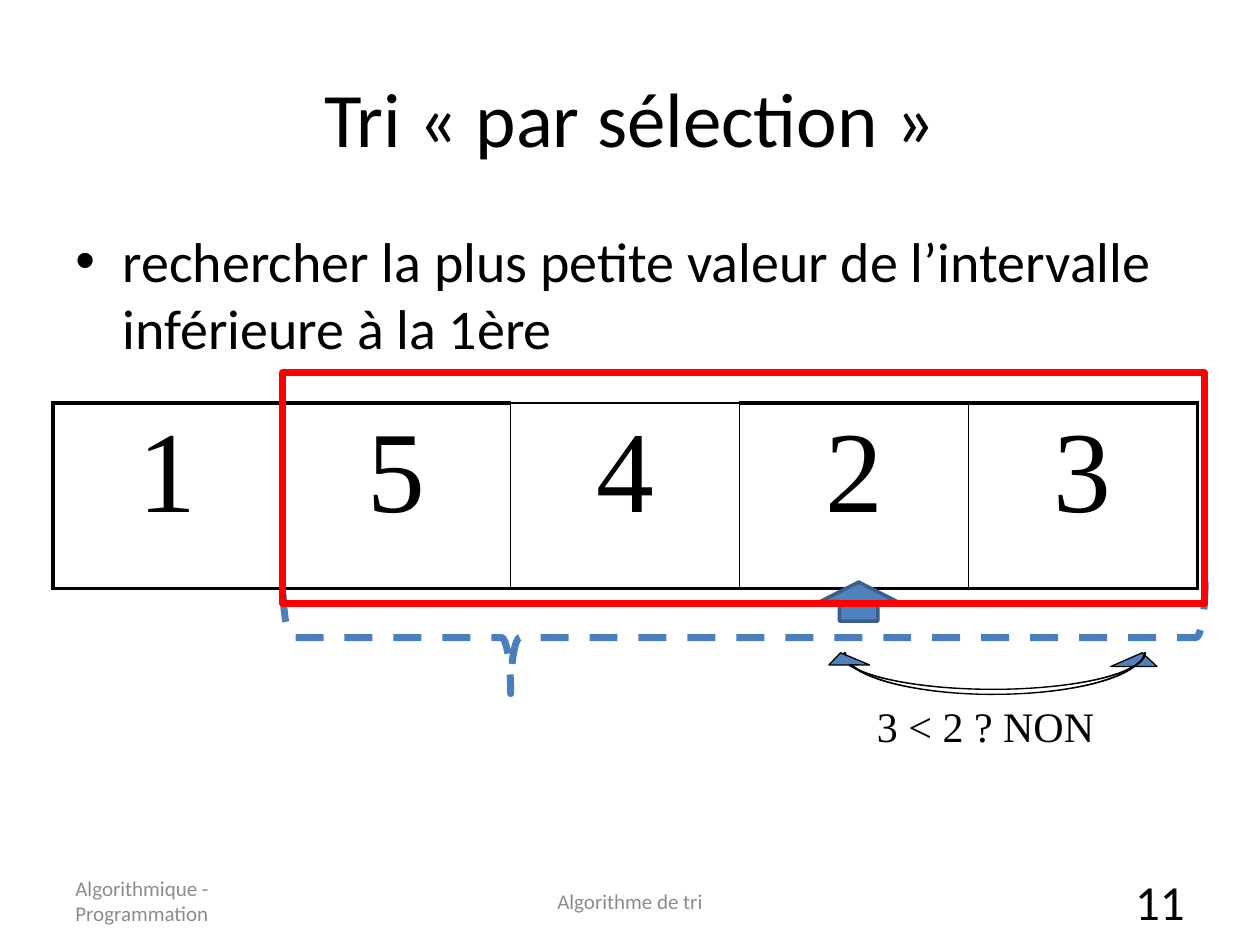
from dataclasses import dataclass
from typing import Optional

from lxml.etree import SubElement as Sub
from pptx import Presentation
from pptx.dml.color import RGBColor as Rgb
from pptx.enum.dml import MSO_LINE as Dash
from pptx.enum.shapes import MSO_SHAPE as Kind
from pptx.enum.text import MSO_ANCHOR as Anchor, PP_ALIGN as Align
from pptx.oxml.ns import qn
from pptx.util import Pt


@dataclass(frozen=True)
class Theme:
    sans: str = "Calibri"
    serif: str = "Times New Roman"
    ink: str = "000000"
    grey: str = "8C8C8C"
    blue: str = "4F81BD"
    edge: str = "3A5F8C"
    brace: str = "4B7EBC"
    red: str = "FF0000"
    title: float = 44
    body: float = 32
    digit: float = 66
    note: float = 24
    foot: float = 12
    page: float = 28
    thin: float = 1
    thick: float = 2.25


LOOK = Theme()


@dataclass(frozen=True)
class Box:
    left: float
    top: float
    width: float
    height: float

    def pts(self) -> tuple:
        return Pt(self.left), Pt(self.top), Pt(self.width), Pt(self.height)


@dataclass(frozen=True)
class Label:
    text: str
    box: Box
    size: float
    face: str = LOOK.sans
    color: str = LOOK.ink
    align: Align = Align.LEFT
    anchor: Anchor = Anchor.MIDDLE
    wrap: bool = True
    bullet: bool = False
    inset: float = 7.2


@dataclass(frozen=True)
class Figure:
    kind: Kind
    box: Box
    line: str
    weight: float
    fill: Optional[str] = None
    adjust: tuple = ()
    turn: float = 0
    flip: bool = False
    dash: bool = False


def style(para, size: float, face: str, color: str, align: Align) -> None:
    para.alignment = align
    for run in para.runs:
        run.font.size = Pt(size)
        run.font.name = face
        run.font.bold = False
        run.font.color.rgb = Rgb.from_string(color)


def write(slide, item: Label) -> None:
    frame = slide.shapes.add_textbox(*item.box.pts()).text_frame
    frame.word_wrap = item.wrap
    frame.vertical_anchor = item.anchor
    frame.margin_right = Pt(item.inset)
    frame.text = item.text
    para = frame.paragraphs[0]
    style(para, item.size, item.face, item.color, item.align)
    if item.bullet:
        para.space_before = Pt(item.size * 0.2)
        props = para._p.get_or_add_pPr()
        props.set("marL", str(Pt(27)))
        props.set("indent", str(-Pt(27)))
        Sub(props, qn("a:buFont"), typeface="Arial")
        Sub(props, qn("a:buChar"), char="•")


def draw(slide, item: Figure) -> None:
    shape = slide.shapes.add_shape(item.kind, *item.box.pts())
    shape.shadow.inherit = False
    shape.rotation = item.turn
    for spot, value in enumerate(item.adjust):
        shape.adjustments[spot] = value
    if item.flip:
        shape._element.spPr.find(qn("a:xfrm")).set("flipH", "1")
    if item.fill:
        shape.fill.solid()
        shape.fill.fore_color.rgb = Rgb.from_string(item.fill)
    else:
        shape.fill.background()
    shape.line.color.rgb = Rgb.from_string(item.line)
    shape.line.width = Pt(item.weight)
    if item.dash:
        shape.line.dash_style = Dash.DASH


def border(cell, sides: dict[str, float]) -> None:
    props = cell._tc.get_or_add_tcPr()
    for spot, (side, weight) in enumerate(sides.items()):
        line = props.makeelement(qn(f"a:ln{side}"), {"w": str(Pt(weight))})
        props.insert(spot, line)
        Sub(Sub(line, qn("a:solidFill")), qn("a:srgbClr"), val=LOOK.ink)


def fill_row(slide, box: Box, values: list[str], light: int) -> None:
    table = slide.shapes.add_table(1, len(values), *box.pts()).table
    table.first_row = table.horz_banding = False
    last = len(values) - 1
    for col, value in enumerate(values):
        table.columns[col].width = Pt(box.width / len(values))
        cell = table.cell(0, col)
        cell.fill.background()
        cell.text = value
        para = cell.text_frame.paragraphs[0]
        para.space_before = Pt(LOOK.digit * 0.2)
        style(para, LOOK.digit, LOOK.serif, LOOK.ink, Align.CENTER)
        border(cell, {
            "L": LOOK.thick if col == 0 else LOOK.thin,
            "R": LOOK.thick if col == last else LOOK.thin,
            "T": LOOK.thin if col == light else LOOK.thick,
            "B": LOOK.thick,
        })


BENT = (0.032, 1.112, 0.333)
LABELS = [
    Label("Tri «\u00a0par sélection\u00a0»".replace("\u00a0", " "), Box(36, 21.6, 648, 90),
          LOOK.title, align=Align.CENTER),
    Label("rechercher la plus petite valeur de l’intervalle inférieure à la 1ère",
          Box(36, 126, 648, 356.4), LOOK.body, anchor=Anchor.TOP, bullet=True),
    Label("Algorithmique - Programmation", Box(36, 500.4, 168, 28.8),
          LOOK.foot, color=LOOK.grey, inset=24),
    Label("Algorithme de tri", Box(246, 500.4, 228, 28.8),
          LOOK.foot, color=LOOK.grey, align=Align.CENTER),
    Label("11", Box(516, 500.4, 168, 28.8), LOOK.page, align=Align.RIGHT),
    Label("3 < 2 ? NON", Box(494, 396.7, 139.7, 36), LOOK.note,
          face=LOOK.serif, anchor=Anchor.TOP, wrap=False),
]
FIGURES = [
    Figure(Kind.LEFT_BRACE, Box(393.1, 100.8, 64.1, 527), LOOK.brace, 4,
           adjust=(0.083, 0.247), turn=270, dash=True),
    Figure(Kind.UP_ARROW, Box(468.7, 332.6, 43.9, 22.3), LOOK.edge, 2, LOOK.blue),
    Figure(Kind.CURVED_UP_ARROW, Box(482.4, 373, 183.6, 23.8), LOOK.ink, 0.75,
           LOOK.blue, BENT),
    Figure(Kind.CURVED_UP_ARROW, Box(468.7, 373, 185.8, 20.9), LOOK.ink, 0.75,
           LOOK.blue, BENT, flip=True),
    Figure(Kind.RECTANGLE, Box(161.3, 213.1, 527, 131.8), LOOK.red, 4),
]


def main() -> None:
    deck = Presentation()
    deck.slide_width, deck.slide_height = Pt(720), Pt(540)
    slide = deck.slides.add_slide(deck.slide_layouts[6])
    fill_row(slide, Box(30.2, 230.4, 654, 105.8), ["1", "5", "4", "2", "3"], light=2)
    for label in LABELS:
        write(slide, label)
    for figure in FIGURES:
        draw(slide, figure)
    deck.save("out.pptx")


if __name__ == "__main__":
    main()
